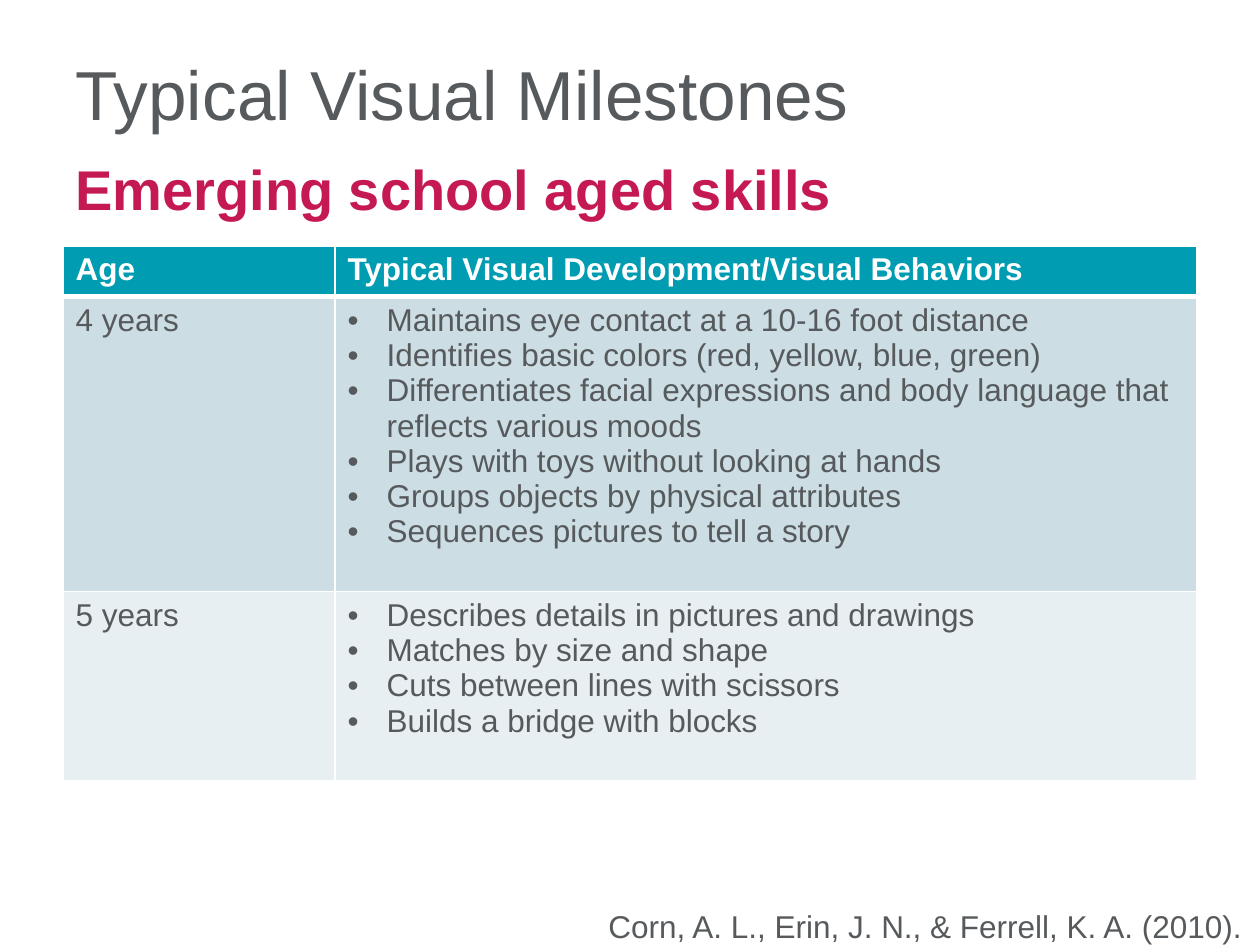
"""Builds a slide with a table of visual milestones at four and five years."""
from lxml import etree
from pptx import Presentation
from pptx import util as u
from pptx.dml.color import RGBColor
from pptx.enum import text
from pptx.oxml import ns

PX = 914400 // 126
FONT = "Arial"
COLORS = {
    "grey": "565A5C",
    "red": "C51954",
    "teal": "009CB1",
    "blue": "CCDEE4",
    "pale": "E7EFF2",
    "white": "FFFFFF",
}
HEADER = ["Age", "Typical Visual Development/Visual Behaviors"]
MILESTONES = [
    ("4 years", "blue", [
        "Maintains eye contact at a 10-16 foot distance",
        "Identifies basic colors (red, yellow, blue, green)",
        "Differentiates facial expressions and body language that reflects various moods",
        "Plays with toys without looking at hands",
        "Groups objects by physical attributes",
        "Sequences pictures to tell a story",
    ]),
    ("5 years", "pale", [
        "Describes details in pictures and drawings",
        "Matches by size and shape",
        "Cuts between lines with scissors",
        "Builds a bridge with blocks",
    ]),
]


def rgb(name):
    return RGBColor.from_string(COLORS[name])


def add_run(p, words, size, color, bold=False):
    r = p.add_run()
    r.text = words
    r.font.name = FONT
    r.font.size = u.Pt(size)
    r.font.bold = bold
    r.font.color.rgb = rgb(color)


def add_text(s, box, words, size, color, bold=False, top=10):
    sp = s.shapes.add_textbox(*(n * PX for n in box))
    tf = sp.text_frame
    tf.word_wrap = True
    tf.vertical_anchor = text.MSO_ANCHOR.TOP
    tf.margin_top = top * PX
    add_run(tf.paragraphs[0], words, size, color, bold)


def add_bullet(p):
    pPr = p._p.get_or_add_pPr()
    pPr.set("marL", str(39 * PX))
    pPr.set("indent", str(-39 * PX))
    etree.SubElement(pPr, ns.qn("a:buFont")).set("typeface", FONT)
    etree.SubElement(pPr, ns.qn("a:buChar")).set("char", "•")


def add_borders(cell, widths):
    tcPr = cell._tc.get_or_add_tcPr()
    for i, (side, width) in enumerate(zip("LRTB", widths)):
        ln = etree.Element(ns.qn(f"a:ln{side}"), w=str(u.Pt(width)))
        fill = etree.SubElement(ln, ns.qn("a:solidFill"))
        etree.SubElement(fill, ns.qn("a:srgbClr")).set("val", COLORS["white"])
        tcPr.insert(i, ln)


def fill_cell(cell, lines, fill, color="grey", bold=False, bullets=False, widths=(1, 1, 1, 1)):
    cell.fill.solid()
    cell.fill.fore_color.rgb = rgb(fill)
    add_borders(cell, widths)
    tf = cell.text_frame
    for i, line in enumerate(lines):
        p = tf.add_paragraph() if i else tf.paragraphs[0]
        if bullets:
            add_bullet(p)
        add_run(p, line, 18, color, bold)


def add_milestones(s, box, cols, rows):
    frame = s.shapes.add_table(len(rows), len(cols), *(n * PX for n in box))
    table = frame.table
    for col, width in zip(table.columns, cols):
        col.width = width * PX
    for row, height in zip(table.rows, rows):
        row.height = height * PX
    for i, title in enumerate(HEADER):
        fill_cell(table.cell(0, i), [title], "teal", "white", True, widths=(1, 1, 1, 3))
    for i, (age, fill, skills) in enumerate(MILESTONES, 1):
        top = 3 if i == 1 else 1
        widths = (1, 1, top, 1)
        fill_cell(table.cell(i, 0), [age], fill, widths=widths)
        fill_cell(table.cell(i, 1), skills, fill, bullets=True, widths=widths)


def main():
    prs = Presentation()
    prs.slide_width, prs.slide_height = 1260 * PX, 945 * PX
    s = prs.slides.add_slide(prs.slide_layouts[6])
    add_text(s, (63, 38, 856, 158), "Typical Visual Milestones", 39.6, "grey", top=13)
    add_milestones(s, (63, 246, 1134, 534), (272, 862), (50, 295, 189))
    add_text(s, (63, 144, 822, 81), "Emerging school aged skills", 32, "red", True)
    add_text(s, (596, 897, 803, 50), "Corn, A. L., Erin, J. N., & Ferrell, K. A. (2010).", 18, "grey")
    prs.save("out.pptx")


if __name__ == "__main__":
    main()
